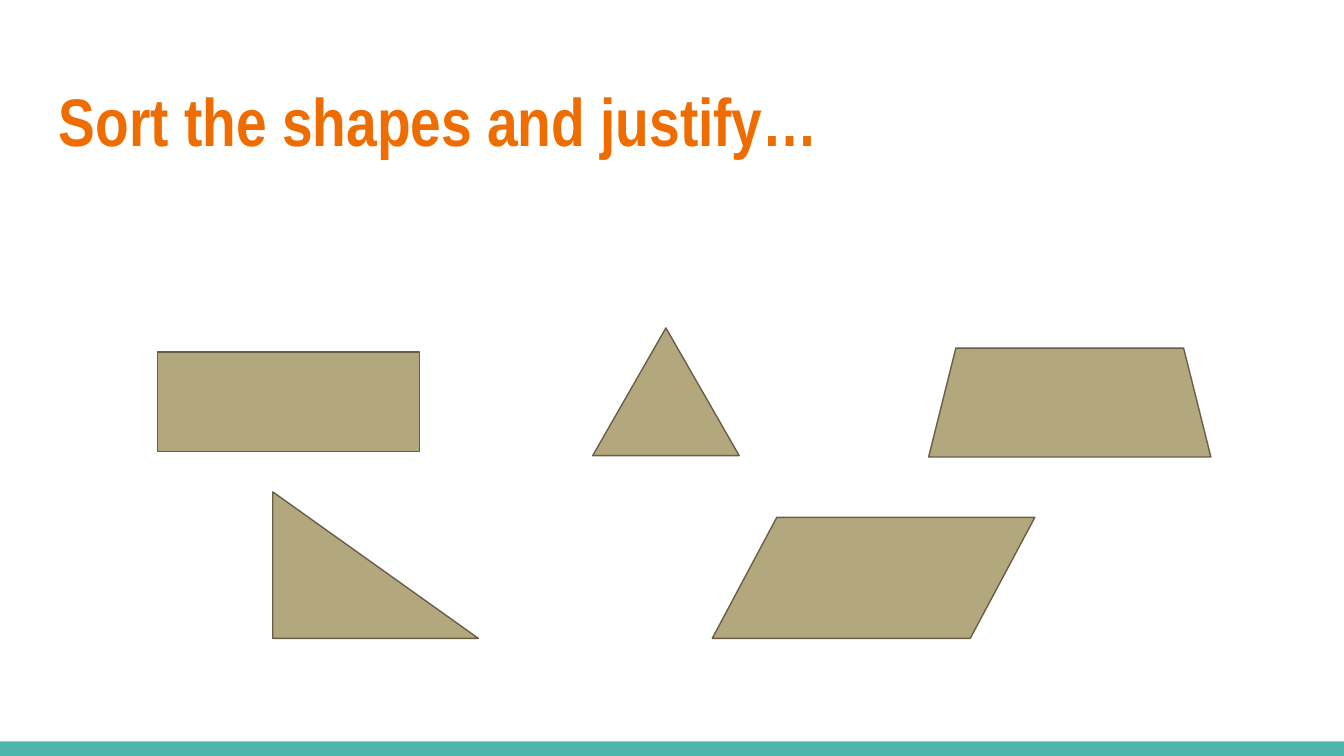
from pptx import Presentation
from pptx import util as u
from pptx.dml.color import RGBColor
from pptx.enum import shapes, text

ORANGE = RGBColor(0xEF, 0x6C, 0x00)
TEAL = RGBColor(0x4D, 0xB6, 0xAC)
KHAKI = RGBColor(0xB3, 0xA7, 0x7D)
BROWN = RGBColor(0x69, 0x5D, 0x46)
KINDS = shapes.MSO_SHAPE

FIGURES = (
    (KINDS.RECTANGLE, 84.24, 188.64, 140.4, 53.28),
    (KINDS.FLOWCHART_DATA, 381.6, 277.2, 172.8, 64.8),
    (KINDS.TRAPEZOID, 497.52, 186.48, 151.2, 58.32),
    (KINDS.RIGHT_TRIANGLE, 146.16, 263.52, 110.16, 78.48),
    (KINDS.ISOSCELES_TRIANGLE, 317.52, 175.68, 78.48, 68.4),
)


def add_figure(slide, kind, left, top, width, height, fill, outline=None):
    figure = slide.shapes.add_shape(
        kind, u.Pt(left), u.Pt(top), u.Pt(width), u.Pt(height))
    figure.shadow.inherit = False
    figure.fill.solid()
    figure.fill.fore_color.rgb = fill
    if outline is None:
        figure.line.fill.background()
    else:
        figure.line.color.rgb = outline
        figure.line.width = u.Pt(0.75)


def add_heading(slide, wording):
    heading = slide.shapes.add_textbox(
        u.Pt(24.48), u.Pt(35.28), u.Pt(671.04), u.Pt(55.44))
    frame = heading.text_frame
    frame.word_wrap = True
    frame.vertical_anchor = text.MSO_ANCHOR.TOP
    frame.margin_left = frame.margin_right = u.Pt(7.2)
    frame.margin_top = frame.margin_bottom = u.Pt(7.2)
    words = frame.paragraphs[0].add_run()
    words.text = wording
    words.font.name = "Arial Narrow"
    words.font.size = u.Pt(36)
    words.font.bold = True
    words.font.color.rgb = ORANGE


def main():
    """Build the shape-sorting slide."""
    deck = Presentation()
    deck.slide_width, deck.slide_height = u.Pt(720), u.Pt(405)
    slide = deck.slides.add_slide(deck.slide_layouts[6])
    add_figure(slide, KINDS.RECTANGLE, 0, 397.2, 720, 7.8, TEAL)
    add_heading(slide, "Sort the shapes and justify…")
    for kind, left, top, width, height in FIGURES:
        add_figure(slide, kind, left, top, width, height, KHAKI, BROWN)
    deck.save("out.pptx")


if __name__ == "__main__":
    main()
